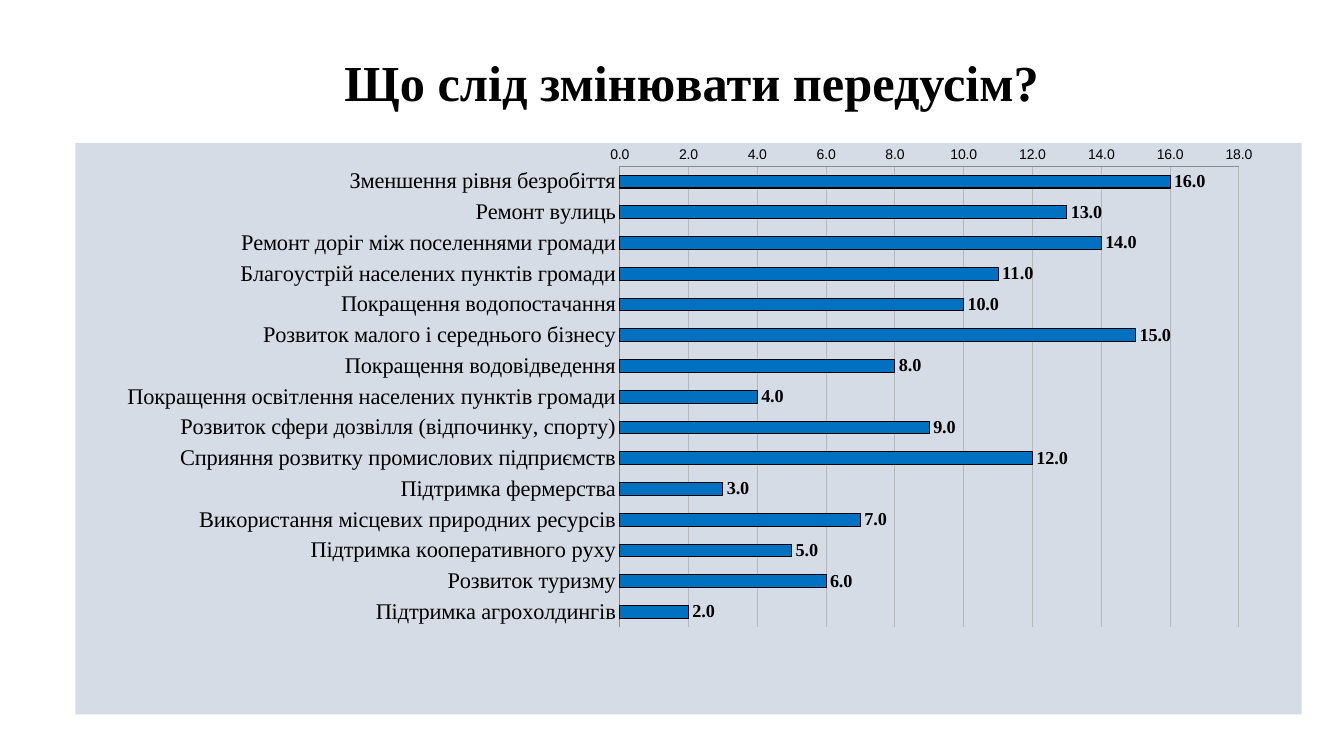
from dataclasses import dataclass

from pptx import Presentation
from pptx.chart.data import CategoryChartData
from pptx.dml.color import RGBColor
from pptx.enum.chart import (XL_AXIS_CROSSES, XL_CHART_TYPE, XL_LABEL_POSITION,
                             XL_TICK_MARK)
from pptx.enum.text import MSO_ANCHOR, PP_ALIGN
from pptx.oxml import parse_xml
from pptx.oxml.ns import nsdecls, qn
from pptx.util import Cm, Pt

BAR = XL_CHART_TYPE.BAR_CLUSTERED
AT_MAXIMUM = XL_AXIS_CROSSES.MAXIMUM
OUTSIDE_END = XL_LABEL_POSITION.OUTSIDE_END
NO_TICK = XL_TICK_MARK.NONE
BOTTOM = MSO_ANCHOR.BOTTOM
LEFT = PP_ALIGN.LEFT

# Content
TITLE = "Що слід змінювати передусім?"
PRIORITIES = [
    ("Зменшення рівня безробіття", 16),
    ("Ремонт вулиць", 13),
    ("Ремонт доріг між поселеннями громади", 14),
    ("Благоустрій населених пунктів громади", 11),
    ("Покращення водопостачання", 10),
    ("Розвиток малого і середнього бізнесу", 15),
    ("Покращення водовідведення", 8),
    ("Покращення освітлення населених пунктів громади", 4),
    ("Розвиток сфери дозвілля (відпочинку, спорту)", 9),
    ("Сприяння розвитку промислових підприємств", 12),
    ("Підтримка фермерства", 3),
    ("Використання місцевих природних ресурсів", 7),
    ("Підтримка кооперативного руху", 5),
    ("Розвиток туризму", 6),
    ("Підтримка агрохолдингів", 2),
]
NUMBER_FORMAT = "0.0"
PLOT_AREA = {"x": 0.444, "y": 0.041, "w": 0.505, "h": 0.807}


@dataclass(frozen=True)
class Theme:
    text: str = "000000"
    bar: str = "0070C0"
    panel: str = "D6DCE5"
    grid: str = "B7B7B7"
    axis: str = "8B8B8B"
    serif: str = "Times New Roman"
    sans: str = "Arial"
    base: str = "Calibri"
    title_size: int = 36
    category_size: int = 16
    label_size: int = 13
    scale_size: int = 10
    line: float = 0.75


THEME = Theme()


def style_font(font, name, size, bold=False):
    font.name, font.size, font.bold = name, Pt(size), bold
    font.color.rgb = RGBColor.from_string(THEME.text)


def style_line(line, color):
    line.color.rgb = RGBColor.from_string(color)
    line.width = Pt(THEME.line)


def place(shape, left, top, width, height):
    shape.left, shape.top = Cm(left), Cm(top)
    shape.width, shape.height = Cm(width), Cm(height)


def add_title(page):
    box = page.shapes.title
    place(box, 8.68, 1.06, 23.5, 1.9)
    frame = box.text_frame
    frame.text = TITLE
    frame.vertical_anchor = BOTTOM
    frame.margin_left = 0
    para = frame.paragraphs[0]
    para.alignment, para.line_spacing = LEFT, 0.9
    style_font(para.runs[0].font, THEME.serif, THEME.title_size, True)


def set_panel_and_plot(chart):
    chart_part = chart.element.find(qn("c:chart"))
    chart_part.addnext(parse_xml(
        f'<c:spPr {nsdecls("c", "a")}><a:solidFill><a:srgbClr val="{THEME.panel}"/>'
        '</a:solidFill><a:ln><a:noFill/></a:ln></c:spPr>'))
    plot_area = chart_part.find(qn("c:plotArea"))
    for layout in plot_area.findall(qn("c:layout")):
        plot_area.remove(layout)
    modes = "".join(f'<c:{side}Mode val="edge"/>' for side in "xy")
    sizes = "".join(f'<c:{side} val="{share}"/>' for side, share in PLOT_AREA.items())
    plot_area.insert(0, parse_xml(
        f'<c:layout {nsdecls("c")}><c:manualLayout><c:layoutTarget val="inner"/>'
        f'{modes}{sizes}</c:manualLayout></c:layout>'))


def add_priorities_chart(page):
    data = CategoryChartData(number_format=NUMBER_FORMAT)
    data.categories = [name for name, _ in PRIORITIES]
    data.add_series("Series 1", [score for _, score in PRIORITIES])
    chart = page.shapes.add_chart(BAR, Cm(1.9), Cm(3.6), Cm(30.9), Cm(14.4), data).chart
    chart.has_title = chart.has_legend = False
    style_font(chart.font, THEME.base, THEME.scale_size)
    set_panel_and_plot(chart)

    # Axes: first category on top, scale at the bottom
    categories, scale = chart.category_axis, chart.value_axis
    for axis in (categories, scale):
        axis.major_tick_mark = axis.minor_tick_mark = NO_TICK
        style_line(axis.format.line, THEME.axis)
    categories.reverse_order = True
    categories.crosses = AT_MAXIMUM
    style_font(categories.tick_labels.font, THEME.serif, THEME.category_size)
    scale.minimum_scale, scale.maximum_scale, scale.major_unit = 0, 18, 2
    scale.tick_labels.number_format = NUMBER_FORMAT
    scale.tick_labels.number_format_is_linked = False
    style_font(scale.tick_labels.font, THEME.sans, THEME.scale_size)
    style_line(scale.major_gridlines.format.line, THEME.grid)

    # Bars and their values
    plot = chart.plots[0]
    plot.vary_by_categories = False
    plot.gap_width = 140
    bars = plot.series[0]
    bars.format.fill.solid()
    bars.format.fill.fore_color.rgb = RGBColor.from_string(THEME.bar)
    style_line(bars.format.line, THEME.text)
    labels = bars.data_labels
    labels.show_value = True
    labels.position = OUTSIDE_END
    labels.number_format = NUMBER_FORMAT
    labels.number_format_is_linked = False
    style_font(labels.font, THEME.serif, THEME.label_size, True)


def main():
    deck = Presentation()
    deck.slide_width, deck.slide_height = Cm(33.87), Cm(19.05)
    page = deck.slides.add_slide(deck.slide_layouts[5])
    add_title(page)
    add_priorities_chart(page)
    deck.save("out.pptx")


if __name__ == "__main__":
    main()
